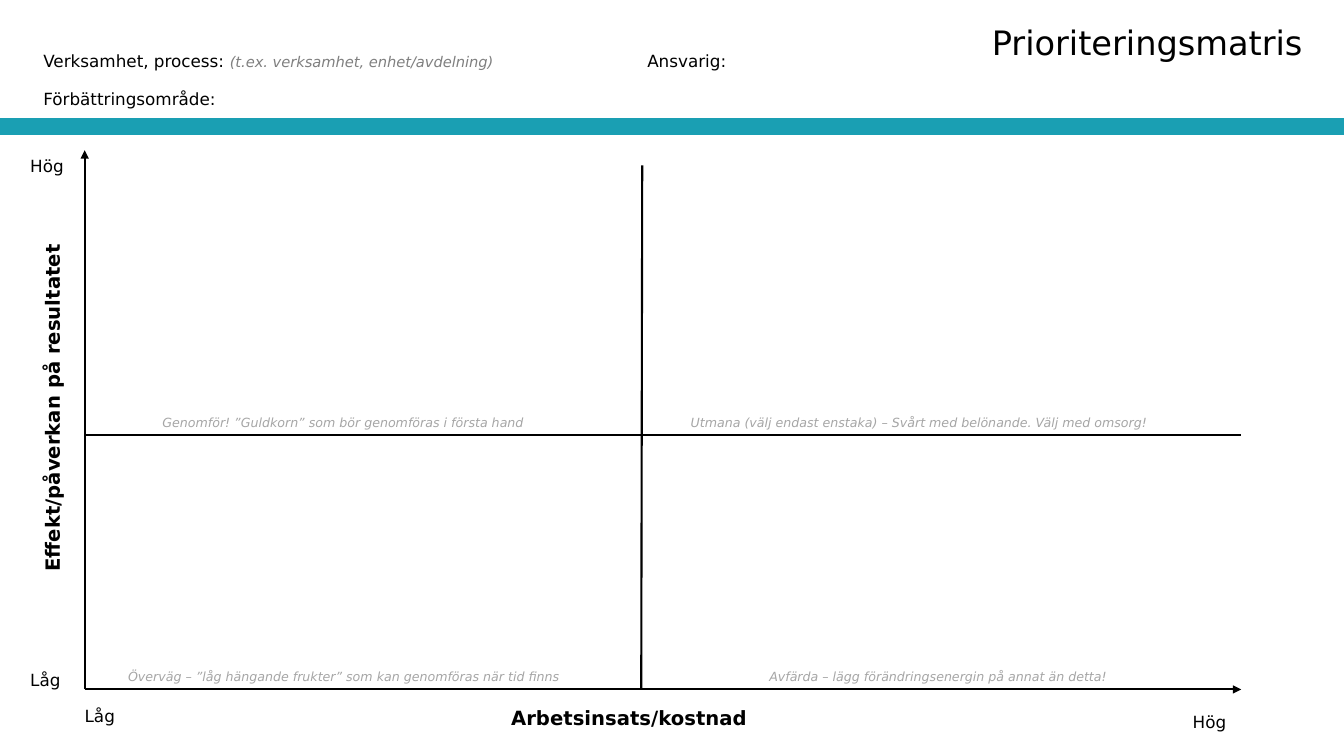
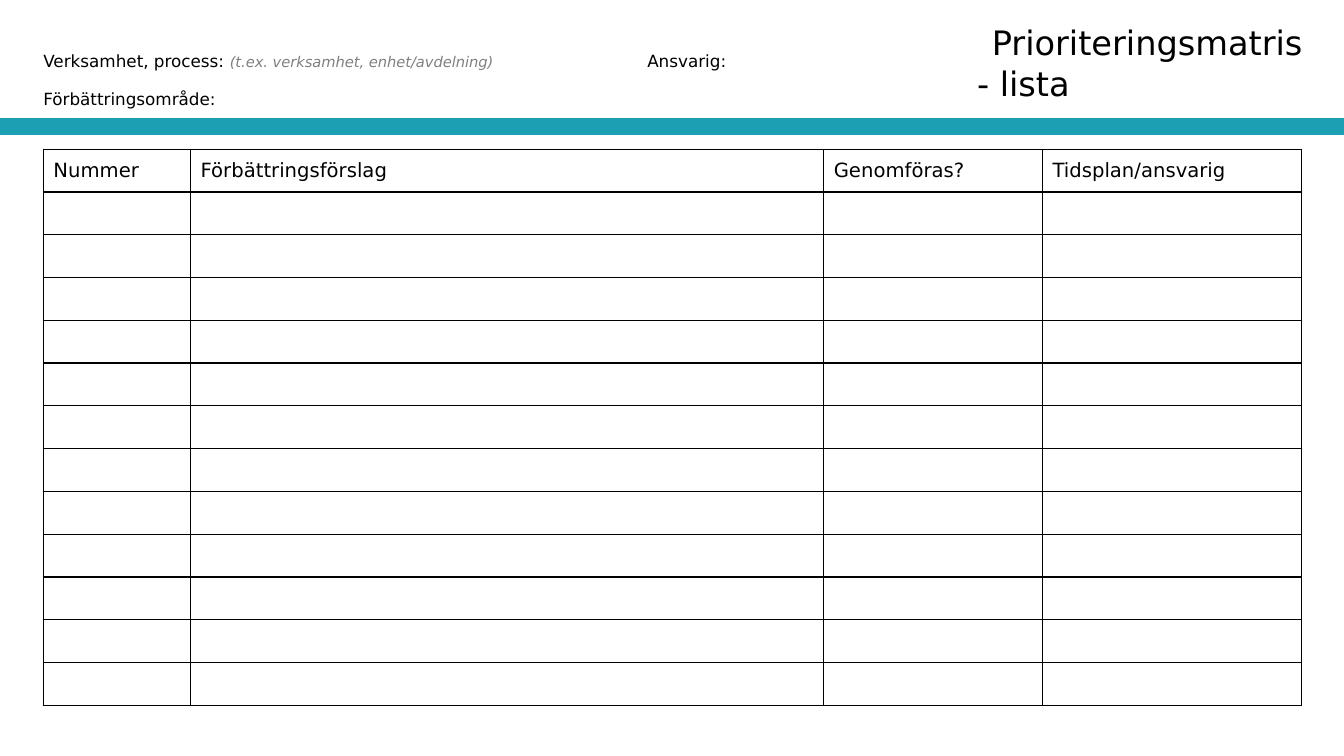
from lxml import etree
from pptx import Presentation
from pptx.dml.color import RGBColor
from pptx.enum.shapes import MSO_CONNECTOR, MSO_SHAPE
from pptx.enum.text import MSO_ANCHOR, MSO_AUTO_SIZE, PP_ALIGN
from pptx.oxml import parse_xml
from pptx.oxml.ns import nsdecls, qn
from pptx.util import Inches, Pt

LEFT, RIGHT = PP_ALIGN.LEFT, PP_ALIGN.RIGHT
TOP, MIDDLE = MSO_ANCHOR.TOP, MSO_ANCHOR.MIDDLE
NO_AUTOFIT = MSO_AUTO_SIZE.NONE
STRAIGHT, RECTANGLE = MSO_CONNECTOR.STRAIGHT, MSO_SHAPE.RECTANGLE

FONT = "DejaVu Sans"
BLACK, GREY, LIGHT_GREY, TEAL = "000000", "808080", "A6A6A6", "1A9FB3"
SLIDE_W, SLIDE_H = 13.33, 7.5
MARGIN = 0.43

# Matrix axes
AXIS_X, AXIS_Y = 0.84, 6.84
AXIS_TOP, AXIS_END = 1.49, 12.31
MID_Y = 4.32

# Table
COLUMNS = [("Nummer", 1.46), ("Förbättringsförslag", 6.28),
           ("Genomföras?", 2.17), ("Tidsplan/ansvarig", 2.57)]
ROW_COUNT, TABLE_TOP, TABLE_H = 13, 1.48, 5.52


def rgb(hex_color):
    return RGBColor.from_string(hex_color)


def add_run(p, text, size=12, color=BLACK, bold=False, italic=False):
    r = p.add_run()
    r.text = text
    r.font.name = FONT
    r.font.size = Pt(size)
    r.font.color.rgb = rgb(color)
    r.font.bold = bold
    r.font.italic = italic


def plain_frame(sp):
    tf = sp.text_frame
    tf.margin_left = tf.margin_top = tf.margin_right = tf.margin_bottom = 0
    tf.word_wrap = True
    tf.auto_size = NO_AUTOFIT
    tf.vertical_anchor = TOP
    return tf


def add_text(slide, text, x, y, w, h=0.2, rotation=0, **fmt):
    sp = slide.shapes.add_textbox(Inches(x), Inches(y), Inches(w), Inches(h))
    sp.rotation = rotation
    p = plain_frame(sp).paragraphs[0]
    add_run(p, text, **fmt)
    return p


def add_line(slide, x1, y1, x2, y2, arrow=False):
    line = slide.shapes.add_connector(
        STRAIGHT, Inches(x1), Inches(y1), Inches(x2), Inches(y2))
    line.line.color.rgb = rgb(BLACK)
    line.line.width = Pt(1.5)
    if arrow:
        ln = line.line._get_or_add_ln()
        etree.SubElement(ln, qn("a:tailEnd"), type="triangle")
    etree.SubElement(line._element.spPr, qn("a:effectLst"))


def set_title(slide, lines):
    sp = slide.shapes.title
    sp.left, sp.top = Inches(9.69), Inches(0.22)
    sp.width, sp.height = Inches(3.23), Inches(0.4 * len(lines))
    tf = plain_frame(sp)
    for i, (text, align) in enumerate(lines):
        p = tf.add_paragraph() if i else tf.paragraphs[0]
        p.alignment = align
        add_run(p, text, size=24)


def add_band(slide):
    sp = slide.shapes.add_shape(
        RECTANGLE, 0, Inches(1.18), Inches(SLIDE_W), Inches(0.15))
    sp.shadow.inherit = False
    sp.fill.solid()
    sp.fill.fore_color.rgb = rgb(TEAL)
    sp.line.color.rgb = rgb(TEAL)
    sp.line.width = Pt(1)


def new_slide(prs, title_lines):
    """Title-only slide with the shared heading, form fields and band."""
    slide = prs.slides.add_slide(prs.slide_layouts[5])
    set_title(slide, title_lines)
    p = add_text(slide, "Verksamhet, process: ", MARGIN, 0.5, 5.8)
    add_run(p, "(t.ex. verksamhet, enhet/avdelning)",
            size=10.5, color=GREY, italic=True)
    add_text(slide, "Ansvarig:", 6.42, 0.5, 3)
    add_text(slide, "Förbättringsområde:", MARGIN, 0.88, 5.8)
    add_band(slide)
    return slide


def set_borders(cell, color=BLACK, width=1):
    tc_pr = cell._tc.get_or_add_tcPr()
    for side in ("lnL", "lnR", "lnT", "lnB"):
        tc_pr.append(parse_xml(
            f'<a:{side} {nsdecls("a")} w="{Pt(width)}"><a:solidFill>'
            f'<a:srgbClr val="{color}"/></a:solidFill></a:{side}>'))


def add_list_table(slide):
    width = sum(w for _, w in COLUMNS)
    table = slide.shapes.add_table(
        ROW_COUNT, len(COLUMNS), Inches(MARGIN), Inches(TABLE_TOP),
        Inches(width), Inches(TABLE_H)).table
    table.first_row = table.horz_banding = False
    for row in table.rows:
        row.height = Inches(TABLE_H / ROW_COUNT)
    for cell in table.iter_cells():
        set_borders(cell)
        cell.fill.background()
        cell.vertical_anchor = MIDDLE
    for i, (heading, w) in enumerate(COLUMNS):
        table.columns[i].width = Inches(w)
        add_run(table.cell(0, i).text_frame.paragraphs[0], heading, size=14)


def build_matrix(prs):
    slide = new_slide(prs, [("Prioriteringsmatris", RIGHT)])

    # Axes and dividers
    add_line(slide, AXIS_X, AXIS_Y, AXIS_END, AXIS_Y, arrow=True)
    add_line(slide, AXIS_X, AXIS_Y, AXIS_X, AXIS_TOP, arrow=True)
    add_line(slide, AXIS_X, MID_Y, AXIS_END, MID_Y)
    add_line(slide, 6.37, 1.64, 6.36, AXIS_Y)

    # Scale ends
    for text, x, y in [("Hög", 11.83, 7.06), ("Låg", AXIS_X, 7),
                       ("Hög", 0.3, 1.55), ("Låg", 0.3, 6.64)]:
        add_text(slide, text, x, y, 1.33)

    # Axis names
    add_text(slide, "Arbetsinsats/kostnad", 5.07, 7, 2.57, 0.24,
             size=14, bold=True)
    add_text(slide, "Effekt/påverkan på resultatet", -1.16, 3.87, 3.36, 0.24,
             rotation=270, size=14, bold=True)

    # Quadrant hints, each just above the line below it
    hints = [
        ("Genomför! ”Guldkorn” som bör genomföras i första hand",
         1.61, MID_Y, 4.58),
        ("Utmana (välj endast enstaka) – Svårt med belönande. "
         "Välj med omsorg!", 6.85, MID_Y, 5.44),
        ("Överväg – ”låg hängande frukter” som kan genomföras när tid finns",
         1.27, AXIS_Y, 5.31),
        ("Avfärda – lägg förändringsenergin på annat än detta!",
         7.63, AXIS_Y, 4.24),
    ]
    for text, x, line_y, w in hints:
        add_text(slide, text, x, line_y - 0.2, w, 0.15,
                 size=9, color=LIGHT_GREY, italic=True)


def build_list(prs):
    slide = new_slide(prs, [("Prioriteringsmatris", RIGHT),
                            ("- lista", LEFT)])
    add_list_table(slide)


def main():
    prs = Presentation()
    prs.slide_width, prs.slide_height = Inches(SLIDE_W), Inches(SLIDE_H)
    build_matrix(prs)
    build_list(prs)
    prs.save("out.pptx")


if __name__ == "__main__":
    main()
